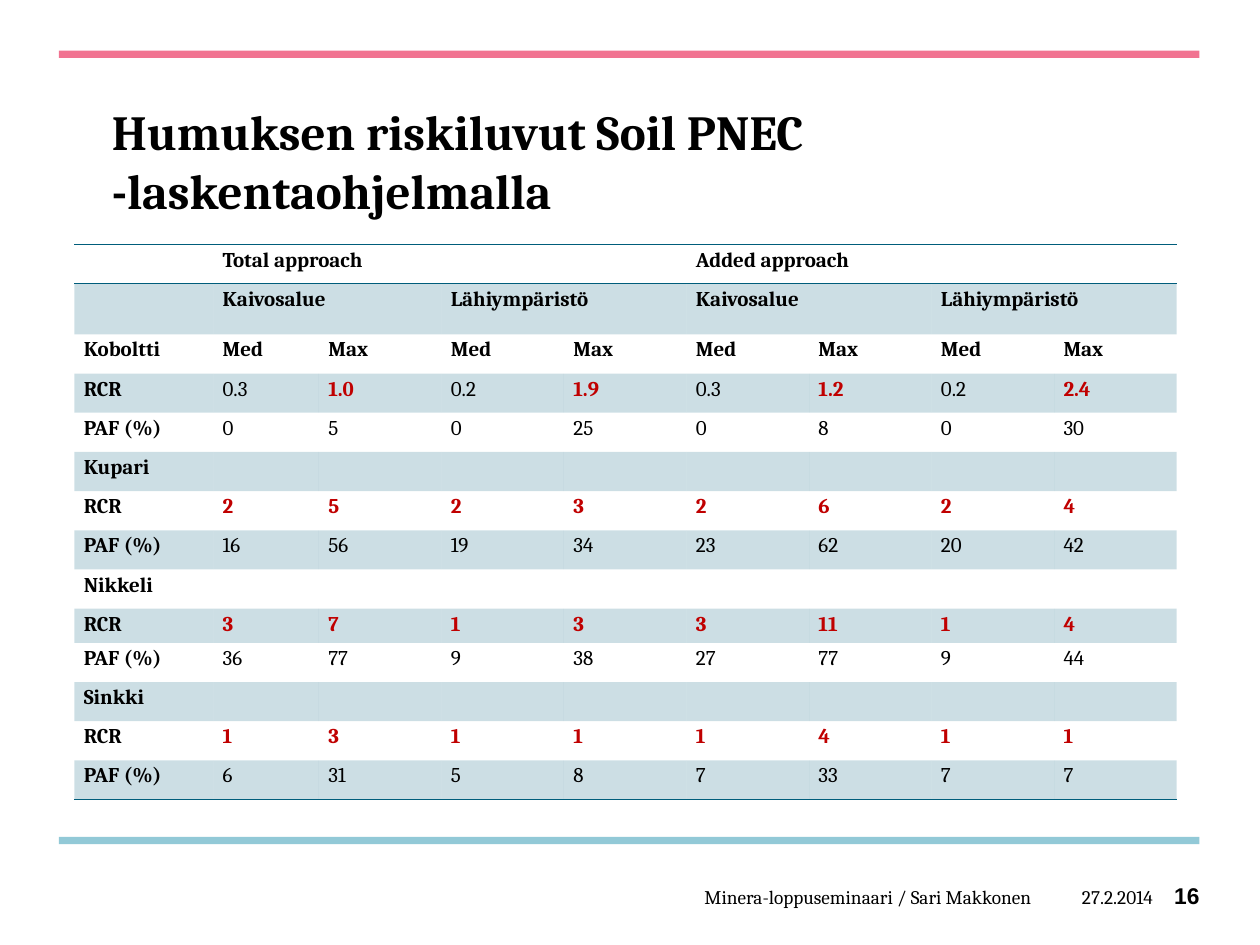
from dataclasses import dataclass

from lxml.etree import SubElement
from pptx import Presentation
from pptx.dml.color import RGBColor
from pptx.enum.shapes import MSO_SHAPE as Shape
from pptx.enum.text import MSO_ANCHOR as Anchor, MSO_AUTO_SIZE as AutoSize, PP_ALIGN as Align
from pptx.oxml.ns import qn
from pptx.util import Cm, Pt

COLORS = {"pink": "F17391", "sky": "92C9D7", "teal": "005D7B",
          "alert": "C00000", "text": "000000"}
SERIF = "Cambria"
NO_STYLE = "{2D5ABB26-0587-4C30-8999-92F81FD0307C}"


@dataclass
class Bar:
    top: float
    color: str


@dataclass
class FooterItem:
    text: str
    left: float
    width: float
    size: int = 11
    font: str = SERIF
    bold: bool = False
    anchor: Anchor = Anchor.MIDDLE
    inset_top: float = 0


@dataclass
class Metal:
    name: str
    rcr: str
    paf: str


BARS = [Bar(1.02, "pink"), Bar(16.87, "sky")]
FOOTER = [
    FooterItem("27.2.2014", 20.8, 2.44),
    FooterItem("Minera-loppuseminaari / Sari Makkonen", 8.48, 12.32),
    FooterItem("16", 23.19, 0.99, 13, "Arial", True, Anchor.TOP, 0.05),
]
METALS = [
    Metal("Koboltti", "0.3 1.0 0.2 1.9 0.3 1.2 0.2 2.4", "0 5 0 25 0 8 0 30"),
    Metal("Kupari", "2 5 2 3 2 6 2 4", "16 56 19 34 23 62 20 42"),
    Metal("Nikkeli", "3 7 1 3 3 11 1 4", "36 77 9 38 27 77 9 44"),
    Metal("Sinkki", "1 3 1 1 1 4 1 1", "6 31 5 8 7 33 7 7"),
]
COLUMN_WIDTHS = [2.8, 2.13] + [2.47] * 7
ROW_HEIGHTS = [0.79, 1.02] + [0.79] * 7 + [0.69] + [0.79] * 4


def rgb(name: str) -> RGBColor:
    return RGBColor.from_string(COLORS[name])


def style_runs(paragraph, size: int, bold: bool, font: str = SERIF, color: str = "text") -> None:
    for run in paragraph.runs:
        run.font.size, run.font.bold, run.font.name = Pt(size), bold, font
        run.font.color.rgb = rgb(color)


def draw_bar(slide, bar: Bar) -> None:
    stripe = slide.shapes.add_shape(Shape.RECTANGLE, Cm(1.19), Cm(bar.top), Cm(22.99), Cm(0.15))
    stripe.shadow.inherit = False
    stripe.fill.solid()
    stripe.fill.fore_color.rgb = rgb(bar.color)
    stripe.line.fill.background()


def draw_footer_item(slide, item: FooterItem) -> None:
    box = slide.shapes.add_textbox(Cm(item.left), Cm(17.73), Cm(item.width), Cm(0.69))
    frame = box.text_frame
    frame.word_wrap = True
    frame.margin_left = frame.margin_right = frame.margin_bottom = 0
    frame.margin_top = Cm(item.inset_top)
    frame.vertical_anchor = item.anchor
    frame.text = item.text
    frame.paragraphs[0].alignment = Align.RIGHT
    style_runs(frame.paragraphs[0], item.size, item.bold, item.font)


def add_border(cell, side: str) -> None:
    border = SubElement(cell._tc.get_or_add_tcPr(), qn(f"a:{side}"), w=str(Pt(1)))
    SubElement(SubElement(border, qn("a:solidFill")), qn("a:srgbClr"), val=COLORS["teal"])


def fill_cell(cell, shaded: bool) -> None:
    if not shaded:
        cell.fill.background()
        return
    cell.fill.solid()
    cell.fill.fore_color.rgb = rgb("teal")
    tint = cell._tc.tcPr.find(qn("a:solidFill")).find(qn("a:srgbClr"))
    SubElement(tint, qn("a:alpha"), val="20000")


def write_cell(cell, text: str, bold: bool, color: str) -> None:
    cell.margin_left = cell.margin_right = Cm(0.19)
    cell.margin_top = cell.margin_bottom = 0
    paragraph = cell.text_frame.paragraphs[0]
    if text:
        paragraph.text = text
        paragraph.line_spacing = 1.15
        paragraph.space_after = Pt(10)
        style_runs(paragraph, 12, bold, color=color)
    else:
        # Keeps empty cells from stretching their row
        SubElement(paragraph._p, qn("a:endParaRPr"), sz="1200")


def table_rows() -> list[list[str]]:
    rows = [
        ["", "Total approach", "", "", "", "Added approach", "", "", ""],
        [""] + ["Kaivosalue", "", "Lähiympäristö", ""] * 2,
    ]
    for metal in METALS:
        subheads = ["Med", "Max"] * 4 if metal is METALS[0] else [""] * 8
        rows += [[metal.name] + subheads,
                 ["RCR"] + metal.rcr.split(),
                 ["PAF (%)"] + metal.paf.split()]
    return rows


def draw_risk_table(slide) -> None:
    rows = table_rows()
    frame = slide.shapes.add_table(len(rows), len(COLUMN_WIDTHS), Cm(1.5), Cm(4.93),
                                   Cm(sum(COLUMN_WIDTHS)), Cm(sum(ROW_HEIGHTS)))
    table = frame.table
    table.first_row = table.horz_banding = False
    table._tbl.tblPr.find(qn("a:tableStyleId")).text = NO_STYLE
    for column, width in zip(table.columns, COLUMN_WIDTHS):
        column.width = Cm(width)
    for row, height in zip(table.rows, ROW_HEIGHTS):
        row.height = Cm(height)

    for r, values in enumerate(rows):
        for c, value in enumerate(values):
            cell = table.cell(r, c)
            at_risk = values[0] == "RCR" and c > 0 and float(value) >= 1
            is_number = r > 2 and c > 0
            write_cell(cell, value, at_risk or not is_number, "alert" if at_risk else "text")
            if r == 0:
                add_border(cell, "lnT")
            if r in (0, len(rows) - 1):
                add_border(cell, "lnB")
            fill_cell(cell, r % 2 == 1)

    # Header spans: approaches over four columns, areas over two
    for r, span in ((0, 4), (1, 2)):
        for c in range(1, len(COLUMN_WIDTHS), span):
            table.cell(r, c).merge(table.cell(r, c + span - 1))


def write_title(slide) -> None:
    title = slide.shapes.title
    title.left, title.top, title.width, title.height = Cm(2), Cm(1.83), Cm(22.2), Cm(2.79)
    frame = title.text_frame
    frame.text = "Humuksen riskiluvut Soil PNEC -laskentaohjelmalla"
    frame.word_wrap = True
    frame.auto_size = AutoSize.NONE
    frame.vertical_anchor = Anchor.MIDDLE
    paragraph = frame.paragraphs[0]
    paragraph.alignment = Align.LEFT
    paragraph.line_spacing = Pt(34)
    style_runs(paragraph, 28, True)


def main() -> None:
    deck = Presentation()
    deck.slide_width, deck.slide_height = Cm(25.4), Cm(19.05)
    slide = deck.slides.add_slide(deck.slide_layouts[5])
    for bar in BARS:
        draw_bar(slide, bar)
    write_title(slide)
    draw_risk_table(slide)
    for item in FOOTER:
        draw_footer_item(slide, item)
    deck.save("out.pptx")


if __name__ == "__main__":
    main()
